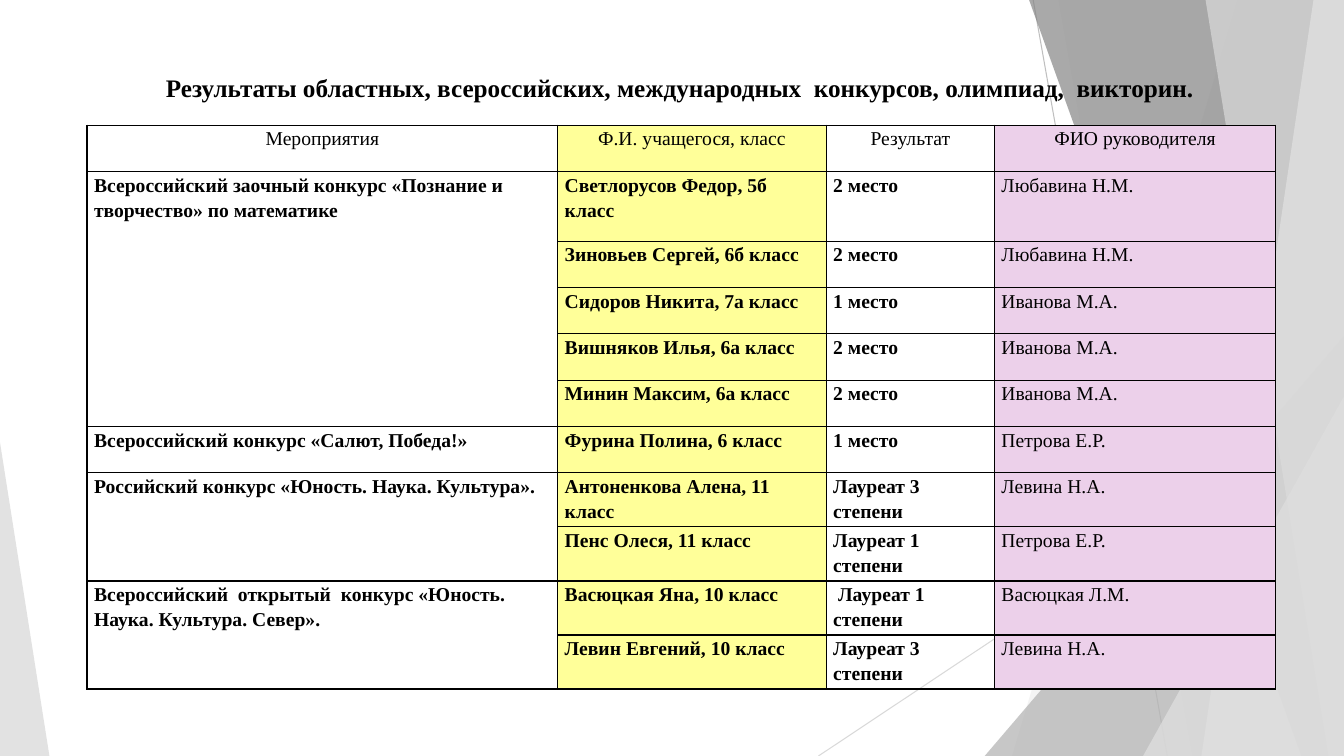
"""Build the slide listing contest results of pupils and their teachers."""

import itertools
from typing import NamedTuple, Optional, Union

import lxml.etree
import pptx
import pptx.dml.color
import pptx.enum.shapes
import pptx.enum.text
import pptx.oxml.ns
import pptx.shapes.autoshape
import pptx.slide
import pptx.table
import pptx.text.text
import pptx.util

BLACK = pptx.dml.color.RGBColor(0x00, 0x00, 0x00)
YELLOW = pptx.dml.color.RGBColor(0xFF, 0xFF, 0x99)
PINK = pptx.dml.color.RGBColor(0xEC, 0xD0, 0xEA)
PALE = pptx.dml.color.RGBColor(0xEB, 0xEB, 0xEB)
LIGHT = pptx.dml.color.RGBColor(0xDD, 0xDD, 0xDD)
SILVER = pptx.dml.color.RGBColor(0xD9, 0xD9, 0xD9)
MIST = pptx.dml.color.RGBColor(0xBF, 0xBF, 0xBF)
MEDIUM = pptx.dml.color.RGBColor(0xB2, 0xB2, 0xB2)
DARK = pptx.dml.color.RGBColor(0x85, 0x85, 0x85)

FONT = "Times New Roman"
WIDTH, HEIGHT = 960, 540


class Ray(NamedTuple):
    start: tuple[float, float]
    end: tuple[float, float]
    color: pptx.dml.color.RGBColor


class Band(NamedTuple):
    top_x: float
    bottom_x: float
    color: pptx.dml.color.RGBColor
    opacity: int


class Wedge(NamedTuple):
    left: float
    top: float
    width: float
    apex: float
    color: pptx.dml.color.RGBColor
    opacity: int


class Column(NamedTuple):
    heading: str
    width: float
    fill: Optional[pptx.dml.color.RGBColor]
    bold: bool


class Entry(NamedTuple):
    pupil: str
    result: str
    teacher: str


class Contest(NamedTuple):
    name: str
    entries: list[Entry]


RAYS = [
    Ray((738, 0), (833.8, HEIGHT), MIST),
    Ray((WIDTH, 290.2), (584.6, HEIGHT), SILVER),
]
FACETS: list[Union[Band, Wedge]] = [
    Band(884.2, 722.9, LIGHT, 30),
    Band(756, 851.8, LIGHT, 20),
    Wedge(703.4, 239.8, 256.6, 1, MEDIUM, 72),
    Band(735.1, 929.5, DARK, 70),
    Band(938.2, 858.2, PALE, 70),
    Band(861.1, 949, LIGHT, 65),
    Wedge(816.5, 283, 143.5, 1, LIGHT, 80),
    Wedge(0, 316.1, 35.3, 0, LIGHT, 85),
]
COLUMNS = [
    Column("Мероприятия", 336.2, None, True),
    Column("Ф.И. учащегося, класс", 191.8, YELLOW, True),
    Column("Результат", 120.2, None, True),
    Column("ФИО руководителя", 200.9, PINK, False),
]
CONTESTS = [
    Contest("Всероссийский заочный конкурс «Познание и творчество» по математике", [
        Entry("Светлорусов Федор, 5б класс", "2 место", "Любавина Н.М."),
        Entry("Зиновьев Сергей, 6б класс", "2 место", "Любавина Н.М."),
        Entry("Сидоров Никита, 7а класс", "1 место", "Иванова М.А."),
        Entry("Вишняков Илья, 6а класс", "2 место", "Иванова М.А."),
        Entry("Минин Максим, 6а класс", "2 место", "Иванова М.А."),
    ]),
    Contest("Всероссийский конкурс «Салют, Победа!»", [
        Entry("Фурина Полина, 6 класс", "1 место", "Петрова Е.Р."),
    ]),
    Contest("Российский конкурс «Юность. Наука. Культура».", [
        Entry("Антоненкова Алена, 11 класс", "Лауреат 3 степени", "Левина Н.А."),
        Entry("Пенс Олеся, 11 класс", "Лауреат 1 степени", "Петрова Е.Р."),
    ]),
    Contest("Всероссийский  открытый  конкурс «Юность. Наука. Культура. Север».", [
        Entry("Васюцкая Яна, 10 класс", " Лауреат 1 степени", "Васюцкая Л.М."),
        Entry("Левин Евгений, 10 класс", "Лауреат 3 степени", "Левина Н.А."),
    ]),
]
ROW_HEIGHTS = [33.1, 49.8] + [33.1] * 5 + [33.8] * 4


def write(frame: pptx.text.text.TextFrame, text: str, *, size: float = 14,
          bold: bool = False, centered: bool = False, spacing: float = 1.15) -> None:
    paragraph = frame.paragraphs[0]
    align = pptx.enum.text.PP_ALIGN
    paragraph.alignment = align.CENTER if centered else align.LEFT
    paragraph.line_spacing = spacing
    run = paragraph.add_run()
    run.text = text
    run.font.name = FONT
    run.font.size = pptx.util.Pt(size)
    run.font.bold = bold
    run.font.color.rgb = BLACK


def draw_ray(slide: pptx.slide.Slide, ray: Ray) -> None:
    ends = [pptx.util.Pt(value) for value in ray.start + ray.end]
    line = slide.shapes.add_connector(pptx.enum.shapes.MSO_CONNECTOR.STRAIGHT, *ends)
    line.line.color.rgb = ray.color
    line.line.width = pptx.util.Pt(0.75)
    lxml.etree.SubElement(line.element.spPr, pptx.oxml.ns.qn("a:effectLst"))


def add_band(slide: pptx.slide.Slide, band: Band) -> pptx.shapes.autoshape.Shape:
    corners = [(band.top_x, 0), (WIDTH, 0), (WIDTH, HEIGHT), (band.bottom_x, HEIGHT)]
    points = [(pptx.util.Pt(x), pptx.util.Pt(y)) for x, y in corners]
    outline = slide.shapes.build_freeform(*points[0])
    outline.add_line_segments(points[1:], close=True)
    return outline.convert_to_shape()


def add_wedge(slide: pptx.slide.Slide, wedge: Wedge) -> pptx.shapes.autoshape.Shape:
    shape = slide.shapes.add_shape(
        pptx.enum.shapes.MSO_SHAPE.ISOSCELES_TRIANGLE,
        pptx.util.Pt(wedge.left), pptx.util.Pt(wedge.top),
        pptx.util.Pt(wedge.width), pptx.util.Pt(HEIGHT - wedge.top))
    shape.adjustments[0] = wedge.apex
    return shape


def draw_facet(slide: pptx.slide.Slide, facet: Union[Band, Wedge]) -> None:
    shape = add_band(slide, facet) if isinstance(facet, Band) else add_wedge(slide, facet)
    shape.shadow.inherit = False
    shape.line.fill.background()
    shape.fill.solid()
    shape.fill.fore_color.rgb = facet.color
    for color in shape.element.spPr.iter(pptx.oxml.ns.qn("a:srgbClr")):
        alpha = lxml.etree.SubElement(color, pptx.oxml.ns.qn("a:alpha"))
        alpha.set("val", str(facet.opacity * 1000))


def draw_title(slide: pptx.slide.Slide) -> None:
    title = slide.shapes.add_textbox(
        pptx.util.Pt(53.3), pptx.util.Pt(48.2), pptx.util.Pt(864.7), pptx.util.Pt(37.4))
    title.text_frame.word_wrap = True
    write(title.text_frame,
          "Результаты областных, всероссийских, международных  конкурсов, олимпиад,  викторин.",
          size=18, bold=True, centered=True, spacing=1)


def style_cell(cell: pptx.table._Cell, fill: Optional[pptx.dml.color.RGBColor]) -> None:
    cell.margin_left = cell.margin_right = pptx.util.Pt(5)
    cell.margin_top = cell.margin_bottom = pptx.util.Pt(0)
    qn = pptx.oxml.ns.qn
    properties = cell._tc.get_or_add_tcPr()
    for side in "LRTB":
        border = lxml.etree.SubElement(properties, qn(f"a:ln{side}"), w=str(pptx.util.Pt(1)))
        paint = lxml.etree.SubElement(border, qn("a:solidFill"))
        lxml.etree.SubElement(paint, qn("a:srgbClr"), val=str(BLACK))
    if fill is None:
        cell.fill.background()
    else:
        cell.fill.solid()
        cell.fill.fore_color.rgb = fill


def draw_results(slide: pptx.slide.Slide) -> None:
    results = slide.shapes.add_table(
        len(ROW_HEIGHTS), len(COLUMNS), pptx.util.Pt(62.2), pptx.util.Pt(89.4),
        pptx.util.Pt(sum(column.width for column in COLUMNS)),
        pptx.util.Pt(sum(ROW_HEIGHTS))).table
    results.first_row = results.horz_banding = False
    for row, height in zip(results.rows, ROW_HEIGHTS):
        row.height = pptx.util.Pt(height)
    for index, column in enumerate(COLUMNS):
        results.columns[index].width = pptx.util.Pt(column.width)
        for row in range(len(ROW_HEIGHTS)):
            style_cell(results.cell(row, index), column.fill)
        write(results.cell(0, index).text_frame, column.heading, centered=True)
    rows = itertools.count(1)
    for contest in CONTESTS:
        span = [next(rows) for _ in contest.entries]
        event = results.cell(span[0], 0)
        if len(span) > 1:
            event.merge(results.cell(span[-1], 0))
        write(event.text_frame, contest.name, bold=COLUMNS[0].bold)
        for row, entry in zip(span, contest.entries):
            for index, text in enumerate(entry, start=1):
                write(results.cell(row, index).text_frame, text, bold=COLUMNS[index].bold)


def main() -> None:
    deck = pptx.Presentation()
    deck.slide_width, deck.slide_height = pptx.util.Pt(WIDTH), pptx.util.Pt(HEIGHT)
    slide = deck.slides.add_slide(deck.slide_layouts[6])
    for ray in RAYS:
        draw_ray(slide, ray)
    for facet in FACETS:
        draw_facet(slide, facet)
    draw_title(slide)
    draw_results(slide)
    deck.save("out.pptx")


if __name__ == "__main__":
    main()
